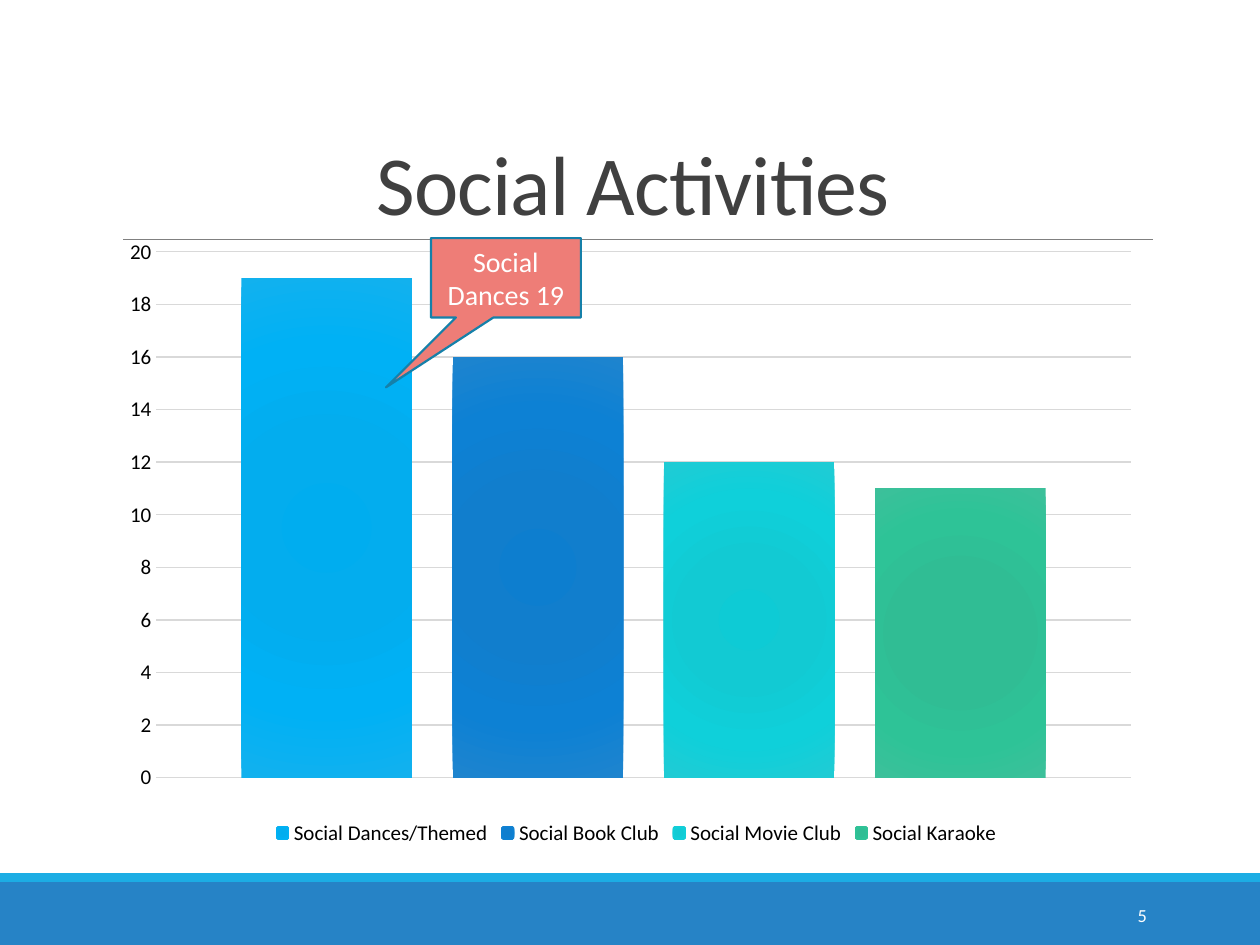
import pptx
import pptx.chart.data
import pptx.dml.color
import pptx.enum.chart
import pptx.enum.shapes
import pptx.enum.text
import pptx.oxml
import pptx.oxml.ns
import pptx.util
from pptx.util import Inches, Pt

# Content
TITLE = "Social Activities"
CALLOUT = "Social Dances 19"
PAGE = "5"
CATEGORY = "1"
GRADIENT_STOPS = (0, 34, 70, 100)
ACTIVITIES = [
    ("Social Dances/Themed", 19, ("00ADEF", "03ADEE", "00B1F5", "12B1EE")),
    ("Social Book Club", 16, ("0D7ECF", "117ECD", "0D81D4", "1E84CE")),
    ("Social Movie Club", 12, ("0ECBD5", "12CAD3", "0FD0DA", "20CBD4")),
    ("Social Karaoke", 11, ("2DBE94", "30BD94", "2EC397", "3CC09A")),
]
PLOT_AREA = {"x": 0.041, "y": 0.02, "w": 0.932, "h": 0.861}
FOOTER_BANDS = [(7, 0.5, "band"), (6.93, 0.07, "stripe")]

THEME = {
    "font": "Calibri",
    "color": {
        "band": "2683C6", "stripe": "1CADE4", "rule": "808080",
        "title": "404040", "text": "000000", "light": "FFFFFF",
        "grid": "D9D9D9", "callout": "EE7D77", "outline": "1580A9",
    },
    "size": {"title": 48, "callout": 16, "chart": 12, "page": 10.5},
}


def color(name):
    return pptx.dml.color.RGBColor.from_string(THEME["color"][name])


def style_font(font, size, color_name):
    font.name = THEME["font"]
    font.size = Pt(THEME["size"][size])
    font.color.rgb = color(color_name)


def write(shape, text, size, color_name, align, anchor):
    tf = shape.text_frame
    tf.word_wrap = True
    tf.auto_size = pptx.enum.text.MSO_AUTO_SIZE.NONE
    tf.vertical_anchor = anchor
    tf.text = text
    p = tf.paragraphs[0]
    p.alignment = align
    style_font(p.font, size, color_name)
    return p


def add_block(s, kind, box, fill):
    block = s.shapes.add_shape(kind, *map(Inches, box))
    block.shadow.inherit = False
    block.fill.solid()
    block.fill.fore_color.rgb = color(fill)
    block.line.fill.background()
    return block


def fill_radial(series, colors):
    """Give the columns of a series a circular gradient."""
    series.format.fill.solid()
    stops = "".join(
        f'<a:gs pos="{pos * 1000}"><a:srgbClr val="{rgb}"/></a:gs>'
        for pos, rgb in zip(GRADIENT_STOPS, colors))
    gradient = pptx.oxml.parse_xml(
        f'<a:gradFill {pptx.oxml.ns.nsdecls("a")} rotWithShape="1">'
        f'<a:gsLst>{stops}</a:gsLst><a:path path="circle">'
        '<a:fillToRect l="100000" t="100000" r="100000" b="100000"/>'
        '</a:path></a:gradFill>')
    solid = series._element.find(".//" + pptx.oxml.ns.qn("a:solidFill"))
    solid.getparent().replace(solid, gradient)


def set_plot_area(chart):
    places = "".join(f'<c:{k} val="{v}"/>' for k, v in PLOT_AREA.items())
    layout = pptx.oxml.parse_xml(
        f'<c:layout {pptx.oxml.ns.nsdecls("c")}><c:manualLayout>'
        '<c:layoutTarget val="inner"/><c:xMode val="edge"/>'
        f'<c:yMode val="edge"/>{places}</c:manualLayout></c:layout>')
    area = chart._chartSpace.chart.plotArea
    for old in area.findall(pptx.oxml.ns.qn("c:layout")):
        area.remove(old)
    area.insert(0, layout)


def add_activity_chart(s):
    data = pptx.chart.data.CategoryChartData()
    data.categories = [CATEGORY]
    for name, value, _ in ACTIVITIES:
        data.add_series(name, [value])
    chart = s.shapes.add_chart(
        pptx.enum.chart.XL_CHART_TYPE.COLUMN_CLUSTERED,
        Inches(0.9), Inches(1.9), Inches(8.3), Inches(4.85), data).chart
    chart.has_title = False
    style_font(chart.font, "chart", "text")
    set_plot_area(chart)

    # Columns
    plot = chart.plots[0]
    plot.vary_by_categories = False
    plot.gap_width, plot.overlap = 100, -24
    for series, (_, _, colors) in zip(plot.series, ACTIVITIES):
        fill_radial(series, colors)

    # Axes
    chart.category_axis.visible = False
    axis = chart.value_axis
    axis.minimum_scale, axis.maximum_scale, axis.major_unit = 0, 20, 2
    axis.major_tick_mark = pptx.enum.chart.XL_TICK_MARK.NONE
    axis.format.line.fill.background()
    style_font(axis.tick_labels.font, "chart", "text")
    grid = axis.major_gridlines.format.line
    grid.color.rgb = color("grid")
    grid.width = Pt(0.75)

    # Legend
    chart.has_legend = True
    chart.legend.position = pptx.enum.chart.XL_LEGEND_POSITION.BOTTOM
    chart.legend.include_in_layout = False
    style_font(chart.legend.font, "chart", "text")


def main():
    align, anchor = pptx.enum.text.PP_ALIGN, pptx.enum.text.MSO_ANCHOR
    kinds = pptx.enum.shapes.MSO_SHAPE
    prs = pptx.Presentation()
    prs.slide_width, prs.slide_height = Inches(10), Inches(7.5)
    s = prs.slides.add_slide(prs.slide_layouts[5])

    # Footer bands and the rule under the title
    for top, height, fill in FOOTER_BANDS:
        add_block(s, kinds.RECTANGLE, (0, top, 10, height), fill)
    rule = s.shapes.add_connector(
        pptx.enum.shapes.MSO_CONNECTOR.STRAIGHT,
        Inches(0.98), Inches(1.9), Inches(9.15), Inches(1.9))
    rule.line.color.rgb = color("rule")
    rule.line.width = Pt(0.5)
    rule._element.spPr.append(pptx.oxml.parse_xml(
        f'<a:effectLst {pptx.oxml.ns.nsdecls("a")}/>'))

    # Title
    title = s.shapes.title
    title.left, title.top = Inches(0.9), Inches(0.31)
    title.width, title.height = Inches(8.25), Inches(1.59)
    p = write(title, TITLE, "title", "title", align.CENTER, anchor.BOTTOM)
    p.line_spacing = 0.85
    p.runs[0].font._element.set("spc", "-50")

    # Page number
    page = s.shapes.add_textbox(*map(Inches, (8.12, 7.06, 1.08, 0.4)))
    write(page, PAGE, "page", "light", align.RIGHT, anchor.MIDDLE)

    add_activity_chart(s)

    # Callout on the tallest column
    callout = add_block(s, kinds.RECTANGULAR_CALLOUT,
                        (3.42, 1.89, 1.19, 0.63), "callout")
    callout.adjustments[0] = -0.8
    callout.adjustments[1] = 1.38
    callout.line.color.rgb = color("outline")
    callout.line.width = Pt(1.25)
    write(callout, CALLOUT, "callout", "light", align.CENTER, anchor.MIDDLE)

    prs.save("out.pptx")


if __name__ == "__main__":
    main()
